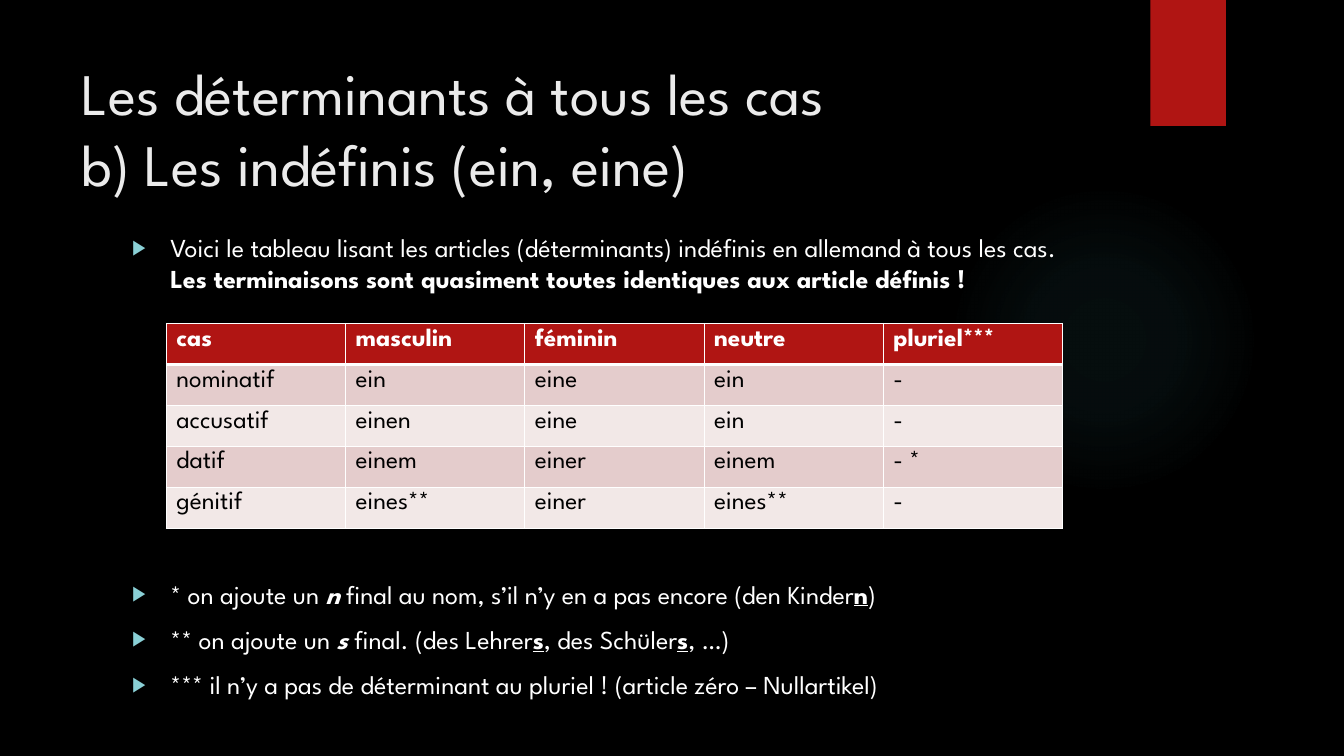
from dataclasses import dataclass

from pptx import Presentation
from pptx.dml.color import RGBColor
from pptx.enum.shapes import MSO_SHAPE
from pptx.enum.text import MSO_ANCHOR, MSO_AUTO_SIZE, PP_ALIGN
from pptx.oxml import parse_xml
from pptx.oxml.ns import nsdecls
from pptx.util import Inches, Pt


@dataclass(frozen=True)
class Theme:
    font: str = "League Spartan"
    title_size: float = 42
    body_size: float = 18.5
    table_size: float = 18
    black: str = "000000"
    white: str = "FFFFFF"
    title: str = "EBEBEB"
    red: str = "B01513"
    bullet: str = "8AD0D6"
    glow: str = "50B9C1"
    bands: tuple = ("E4CCCC", "F2E8E7")


THEME = Theme()

# Each note is a list of (text, style): b = bold, i = italic, u = underlined
NOTES = [
    [("Voici le tableau lisant les articles (déterminants) indéfinis en allemand à tous les cas. ", ""),
     ("Les terminaisons sont quasiment toutes identiques aux article définis !", "b")],
    [("* on ajoute un ", ""), ("n", "bi"),
     (" final au nom, s’il n’y en a pas encore (den Kinder", ""), ("n", "bu"), (")", "")],
    [("** on ajoute un ", ""), ("s ", "bi"), ("final. (des Lehrer", ""), ("s", "bu"),
     (", des Schüler", ""), ("s", "bu"), (", …)", "")],
    [("*** il n’y a pas de déterminant au pluriel ! (article zéro – Nullartikel)", "")],
]
SPACE_BEFORE = [0, 203, 10, 10]  # the second note starts below the table

DECLENSION = [
    ["cas", "masculin", "féminin", "neutre", "pluriel***"],
    ["nominatif", "ein", "eine", "ein", "-"],
    ["accusatif", "einen", "eine", "ein", "-"],
    ["datif", "einem", "einer", "einem", "- *"],
    ["génitif", "eines**", "einer", "eines**", "-"],
]


def set_font(paragraph, size, color):
    font = paragraph.font
    font.name = THEME.font
    font.size = Pt(size)
    font.color.rgb = RGBColor.from_string(color)
    return font


def add_border(cell, side, points):
    """Draw one white cell edge; side is L, R, T or B."""
    cell._tc.get_or_add_tcPr().append(parse_xml(
        f'<a:ln{side} {nsdecls("a")} w="{Pt(points)}"><a:solidFill>'
        f'<a:srgbClr val="{THEME.white}"/></a:solidFill></a:ln{side}>'))


prs = Presentation()
prs.slide_width, prs.slide_height = Inches(13.33), Inches(7.5)
slide = prs.slides.add_slide(prs.slide_layouts[1])
slide.background.fill.solid()
slide.background.fill.fore_color.rgb = RGBColor.from_string(THEME.black)

# Decoration, behind the text
glow = slide.shapes.add_shape(MSO_SHAPE.OVAL, Inches(9.41), Inches(1.83), Inches(3.08), Inches(3.08))
glow.fill.background()
stops = "".join(
    f'<a:gs pos="{position * 1000}"><a:srgbClr val="{THEME.glow}">'
    f'<a:alpha val="{alpha * 1000}"/></a:srgbClr></a:gs>'
    for position, alpha in [(0, 7), (36, 6), (69, 0), (100, 0)])
glow_properties = glow.element.spPr
glow_properties.replace(glow_properties.find("{*}noFill"), parse_xml(
    f'<a:gradFill {nsdecls("a")}><a:gsLst>{stops}</a:gsLst><a:path path="circle">'
    '<a:fillToRect l="50000" t="50000" r="50000" b="50000"/></a:path></a:gradFill>'))

ribbon = slide.shapes.add_shape(MSO_SHAPE.RECTANGLE, Inches(11.41), 0, Inches(0.75), Inches(1.25))
ribbon.fill.solid()
ribbon.fill.fore_color.rgb = RGBColor.from_string(THEME.red)

for layer, decoration in enumerate([glow, ribbon], start=2):
    decoration.line.fill.background()
    decoration.shadow.inherit = False
    decoration.element.getparent().insert(layer, decoration.element)

# Title
title = slide.shapes.title
title.left, title.top, title.width, title.height = Inches(0.71), Inches(0.5), Inches(10.29), Inches(1.53)
title.text_frame.text = "Les déterminants à tous les cas\vb) Les indéfinis (ein, eine)"
title.text_frame.auto_size = MSO_AUTO_SIZE.NONE
title.text_frame.vertical_anchor = MSO_ANCHOR.MIDDLE
heading = title.text_frame.paragraphs[0]
heading.alignment = PP_ALIGN.LEFT
set_font(heading, THEME.title_size, THEME.title)

# Introduction and footnotes
body = slide.placeholders[1]
body.left, body.top, body.width, body.height = Inches(1.21), Inches(2.25), Inches(9.78), Inches(4.59)
body.text_frame.auto_size = MSO_AUTO_SIZE.NONE
body.text_frame.vertical_anchor = MSO_ANCHOR.TOP
for index, (note, space) in enumerate(zip(NOTES, SPACE_BEFORE)):
    paragraph = body.text_frame.add_paragraph() if index else body.text_frame.paragraphs[0]
    properties = paragraph._p.get_or_add_pPr()
    properties.set("marL", str(Inches(0.38)))
    properties.set("indent", str(-Inches(0.38)))
    for bullet_part in (f'buClr {nsdecls("a")}><a:srgbClr val="{THEME.bullet}"/></a:buClr>',
                        f'buSzPct {nsdecls("a")} val="80000"/>',
                        f'buChar {nsdecls("a")} char="▶"/>'):
        properties.append(parse_xml("<a:" + bullet_part))
    paragraph.space_before = Pt(space)
    set_font(paragraph, THEME.body_size, THEME.white)
    for text, style in note:
        run = paragraph.add_run()
        run.text = text
        if "b" in style:
            run.font.bold = True
        if "i" in style:
            run.font.italic = True
        if "u" in style:
            run.font.underline = True

# Declension table
table = slide.shapes.add_table(len(DECLENSION), len(DECLENSION[0]), Inches(1.65), Inches(3.21),
                               Inches(8.89), Inches(2.03)).table
for row, forms in enumerate(DECLENSION):
    is_header = row == 0
    for column, form in enumerate(forms):
        cell = table.cell(row, column)
        cell.text = form
        font = set_font(cell.text_frame.paragraphs[0], THEME.table_size,
                        THEME.white if is_header else THEME.black)
        font.bold = is_header
        for side in "LRTB":
            under_header = (row, side) in [(0, "B"), (1, "T")]
            add_border(cell, side, 3 if under_header else 1)
        cell.fill.solid()
        cell.fill.fore_color.rgb = RGBColor.from_string(
            THEME.red if is_header else THEME.bands[(row - 1) % 2])

prs.save("out.pptx")
